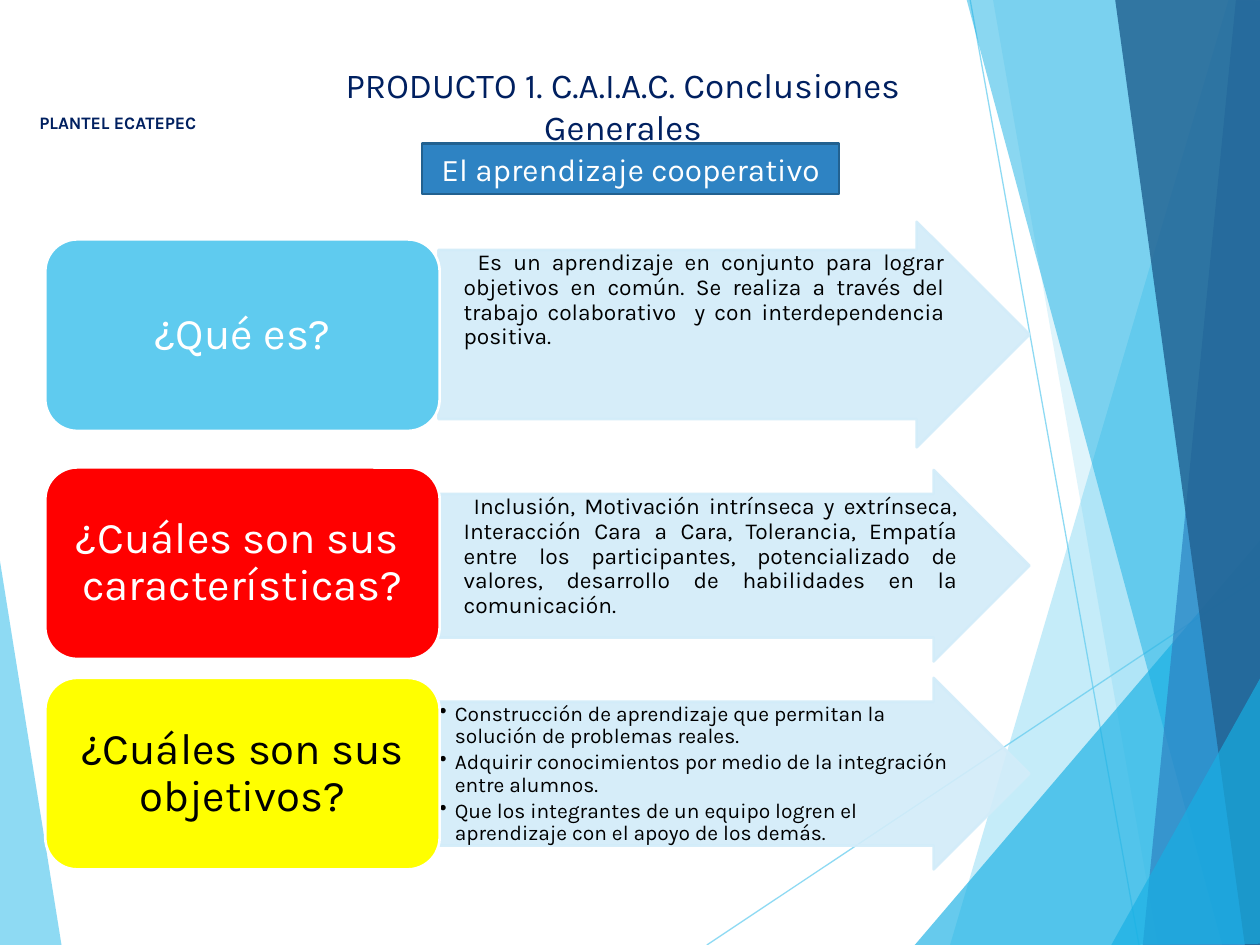
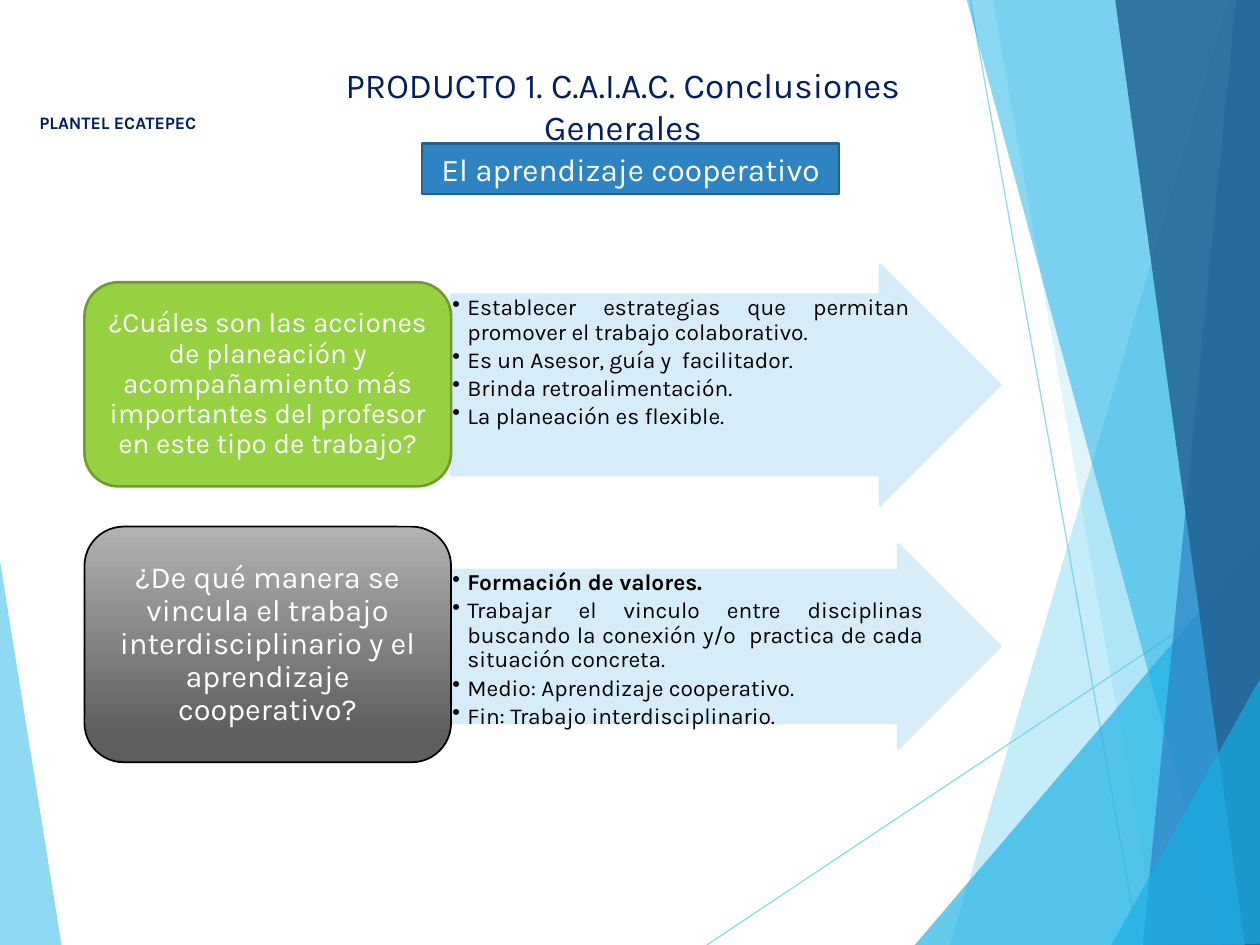
from dataclasses import dataclass

from lxml import etree
from pptx import Presentation
from pptx.dml.color import RGBColor
from pptx.enum.shapes import MSO_CONNECTOR, MSO_SHAPE
from pptx.enum.text import MSO_ANCHOR, MSO_AUTO_SIZE, PP_ALIGN
from pptx.oxml.ns import qn
from pptx.util import Inches, Pt

STRAIGHT = MSO_CONNECTOR.STRAIGHT
RECTANGLE = MSO_SHAPE.RECTANGLE
ROUNDED = MSO_SHAPE.ROUNDED_RECTANGLE
ARROW = MSO_SHAPE.RIGHT_ARROW
TOP, MIDDLE = MSO_ANCHOR.TOP, MSO_ANCHOR.MIDDLE
NO_AUTOFIT = MSO_AUTO_SIZE.NONE
LEFT, CENTER, JUSTIFY = PP_ALIGN.LEFT, PP_ALIGN.CENTER, PP_ALIGN.JUSTIFY


class Theme:
    font = "Karla"
    navy, white, black = "002060", "FFFFFF", "000000"
    sky, cyan, blue, deep = "5FCBEF", "17B0E4", "2E83C3", "226292"
    banner_line, pale = "226190", "D2ECF9"
    red, yellow, green, green_line = "FF0000", "FFFF00", "96D141", "6F9B30"
    gray = ("B2B2B2", "5E5E5E")
    title_size, banner_size, campus_size = 20, 18, 10
    heading_size, body_size, small_body_size = 25, 13, 12
    outline, hairline = 1.5, 0.75


@dataclass
class Row:
    question: str
    answers: list
    label_top: float
    label_height: float
    arrow_top: float
    arrow_height: float
    fill: object
    line: str = Theme.white
    line_width: float = Theme.outline
    text_color: str = Theme.white
    question_size: float = Theme.heading_size
    answer_size: float = Theme.body_size
    align: object = JUSTIFY
    bullet: bool = True
    margin: float = 0.12
    indent: float = -0.12
    bold_answers: tuple = ()


TITLE = "PRODUCTO 1. C.A.I.A.C. Conclusiones Generales"
BANNER = "El aprendizaje cooperativo"
CAMPUS = "PLANTEL ECATEPEC"

FACETS = [
    (Theme.sky, 70, [(-0.01, 4.39), (0.49, 7.51), (-0.01, 7.5)]),
    (Theme.sky, 70, [(5.61, 7.5), (10.01, 4.57)]),
    (Theme.sky, 70, [(7.7, 0), (9.04, 7.5)]),
    (Theme.sky, 36, [(9.75, 0), (7.54, 7.5), (10.02, 7.51), (10.01, 0.01)]),
    (Theme.sky, 20, [(7.88, -0.01), (9.19, 7.5), (10.01, 7.5), (10.01, -0.01)]),
    (Theme.cyan, 66, [(7.26, 7.5), (10, 4.29), (10.01, 7.5)]),
    (Theme.cyan, 50, [(7.67, -0.01), (9.7, 7.5), (10.01, 7.49), (10.01, -0.01)]),
    (Theme.blue, 70, [(9.81, -0.01), (9.07, 7.5), (10.01, 7.5), (10, -0.01)]),
    (Theme.deep, 82, [(8.85, -0.01), (9.88, 7.5), (10.02, 7.5), (10, -0.01)]),
    (Theme.cyan, 66, [(8.82, 7.5), (10.02, 5.35), (10.02, 7.49)]),
]

SLIDES = [
    {
        "label_left": 0.36, "label_width": 3.13,
        "arrow_left": 3.48, "arrow_width": 4.69,
        "label_insets": (0.1, 0.05),
        "rows": [
            Row("¿Qué es?",
                ["Es un aprendizaje en conjunto para lograr objetivos en común. "
                 "Se realiza a través del trabajo colaborativo  y con "
                 "interdependencia positiva."],
                1.9, 1.52, 1.76, 1.79, Theme.sky,
                bullet=False, margin=0.19, indent=0.11),
            Row("¿Cuáles son sus  características?",
                ["Inclusión, Motivación intrínseca y extrínseca, Interacción Cara "
                 "a Cara, Tolerancia, Empatía entre los participantes, "
                 "potencializado de valores, desarrollo de habilidades en la "
                 "comunicación."],
                3.71, 1.52, 3.73, 1.52, Theme.red,
                bullet=False, margin=0.19, indent=0.08),
            Row("¿Cuáles son sus objetivos?",
                ["Construcción de aprendizaje que permitan la solución de "
                 "problemas reales.",
                 "Adquirir conocimientos por medio de la integración entre "
                 "alumnos.",
                 "Que los integrantes de un equipo logren el aprendizaje con el "
                 "apoyo de los demás."],
                5.38, 1.52, 5.38, 1.52, Theme.yellow, text_color=Theme.black,
                answer_size=Theme.small_body_size, align=LEFT),
        ],
    },
    {
        "label_left": 0.67, "label_width": 2.91,
        "arrow_left": 3.58, "arrow_width": 4.36,
        "label_insets": (0.07, 0.03),
        "rows": [
            Row("¿Cuáles son las acciones de planeación y acompañamiento más "
                "importantes del profesor en este tipo de trabajo?",
                ["Establecer estrategias que permitan promover el trabajo "
                 "colaborativo.",
                 "Es un Asesor, guía y  facilitador.",
                 "Brinda retroalimentación.",
                 "La planeación es flexible."],
                2.24, 1.62, 2.1, 1.91, Theme.green, Theme.green_line,
                question_size=16),
            Row("¿De qué manera se vincula el trabajo interdisciplinario y el "
                "aprendizaje cooperativo?",
                ["Formación de valores.",
                 "Trabajar el vinculo entre disciplinas buscando la conexión y/o  "
                 "practica de cada situación concreta.",
                 "Medio: Aprendizaje cooperativo.",
                 "Fin: Trabajo interdisciplinario."],
                4.18, 1.87, 4.32, 1.62, Theme.gray, Theme.black, 1,
                question_size=17.5, bold_answers=(0,)),
        ],
    },
]


def rgb(color):
    return RGBColor.from_string(color)


def set_opacity(shape, percent):
    for color in shape._element.spPr.iter(qn("a:srgbClr")):
        etree.SubElement(color, qn("a:alpha"), val=str(percent * 1000))


def set_frame(frame, anchor, insets=(0.1, 0.05)):
    frame.word_wrap = True
    frame.auto_size = NO_AUTOFIT
    frame.vertical_anchor = anchor
    frame.margin_left = frame.margin_right = Inches(insets[0])
    frame.margin_top = frame.margin_bottom = Inches(insets[1])


def write(paragraph, text, size, color, align=CENTER, bold=False):
    paragraph.alignment = align
    run = paragraph.add_run()
    run.text = text
    run.font.name = Theme.font
    run.font.size = Pt(size)
    run.font.bold = bold
    run.font.color.rgb = rgb(color)


def set_indent(paragraph, margin, indent=0, bullet=False):
    properties = paragraph._p.get_or_add_pPr()
    properties.set("marL", str(Inches(margin)))
    properties.set("indent", str(Inches(indent)))
    if bullet:
        etree.SubElement(properties, qn("a:buChar"), char="•")


def add_box(slide, kind, box, fill, line, line_width=Theme.outline):
    shape = slide.shapes.add_shape(kind, *map(Inches, box))
    shape.shadow.inherit = False
    if isinstance(fill, tuple):
        shape.fill.gradient()
        shape.fill.gradient_angle = 270
        for stop, color, position in zip(shape.fill.gradient_stops, fill, (0, 0.88)):
            stop.color.rgb = rgb(color)
            stop.position = position
    else:
        shape.fill.solid()
        shape.fill.fore_color.rgb = rgb(fill)
    shape.line.color.rgb = rgb(line)
    shape.line.width = Pt(line_width)
    return shape


def add_facet(slide, color, opacity, points):
    points = [(Inches(x), Inches(y)) for x, y in points]
    if len(points) == 2:
        facet = slide.shapes.add_connector(STRAIGHT, *points[0], *points[1])
        facet.line.color.rgb = rgb(color)
        facet.line.width = Pt(Theme.hairline)
        etree.SubElement(facet._element.spPr, qn("a:effectLst"))
    else:
        builder = slide.shapes.build_freeform(*points[0])
        builder.add_line_segments(points[1:], close=True)
        facet = builder.convert_to_shape()
        facet.shadow.inherit = False
        facet.fill.solid()
        facet.fill.fore_color.rgb = rgb(color)
        facet.line.fill.background()
    set_opacity(facet, opacity)
    return facet


def move_facets_to_layout(slide, layout):
    for number, facet in enumerate(FACETS):
        element = add_facet(slide, *facet)._element
        element.xpath(".//p:cNvPr")[0].set("id", str(100 + number))
        layout.shapes._spTree.append(element)


def add_heading(slide):
    title = slide.shapes.title
    title.left, title.top, title.width, title.height = map(
        Inches, (2.01, 0.44, 5.75, 0.8))
    set_frame(title.text_frame, MIDDLE)
    paragraph = title.text_frame.paragraphs[0]
    set_indent(paragraph, 0.12)
    write(paragraph, TITLE, Theme.title_size, Theme.navy)


def add_banner_and_campus(slide):
    banner = add_box(slide, RECTANGLE, (3.35, 1.14, 3.31, 0.4),
                     Theme.blue, Theme.banner_line)
    set_frame(banner.text_frame, MIDDLE)
    write(banner.text_frame.paragraphs[0], BANNER, Theme.banner_size, Theme.white)
    campus = slide.shapes.add_textbox(*map(Inches, (0.1, 0.84, 1.67, 0.28)))
    set_frame(campus.text_frame, TOP)
    write(campus.text_frame.paragraphs[0], CAMPUS, Theme.campus_size,
          Theme.navy, bold=True)


def add_row(slide, row, columns):
    arrow = add_box(slide, ARROW, (columns["arrow_left"], row.arrow_top,
                                   columns["arrow_width"], row.arrow_height),
                    Theme.pale, Theme.pale)
    arrow.adjustments[0], arrow.adjustments[1] = 0.75, 0.5
    set_opacity(arrow, 90)
    frame = arrow.text_frame
    set_frame(frame, TOP, (0.01, 0.01))
    for number, answer in enumerate(row.answers):
        paragraph = frame.add_paragraph() if number else frame.paragraphs[0]
        paragraph.line_spacing = 0.9
        paragraph.space_after = Pt(0.15 * row.answer_size)
        set_indent(paragraph, row.margin, row.indent, row.bullet)
        write(paragraph, answer, row.answer_size, Theme.black, row.align,
              number in row.bold_answers)

    label = add_box(slide, ROUNDED, (columns["label_left"], row.label_top,
                                     columns["label_width"], row.label_height),
                    row.fill, row.line, row.line_width)
    set_frame(label.text_frame, MIDDLE, columns["label_insets"])
    paragraph = label.text_frame.paragraphs[0]
    paragraph.line_spacing = 0.9
    write(paragraph, row.question, row.question_size, row.text_color)


def main():
    presentation = Presentation()
    presentation.slide_width, presentation.slide_height = Inches(10), Inches(7.5)
    layout = presentation.slide_layouts[5]
    for number, content in enumerate(SLIDES):
        slide = presentation.slides.add_slide(layout)
        if number == 0:
            move_facets_to_layout(slide, layout)
        add_heading(slide)
        for row in content["rows"]:
            add_row(slide, row, content)
        add_banner_and_campus(slide)
    presentation.save("out.pptx")


if __name__ == "__main__":
    main()
